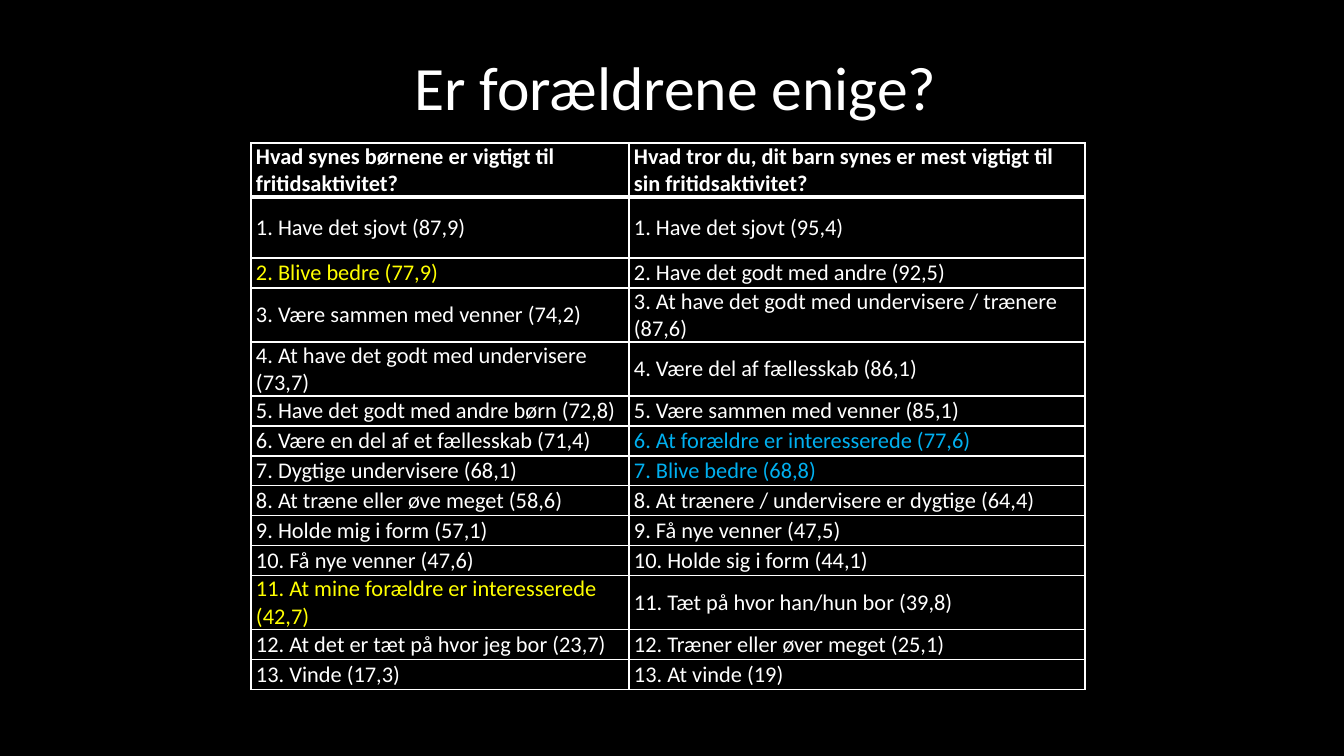
from lxml import etree
from pptx import Presentation
from pptx.dml.color import RGBColor
from pptx.enum.text import MSO_ANCHOR, PP_ALIGN
from pptx.oxml.ns import qn
from pptx.util import Emu, Pt

MIDDLE = MSO_ANCHOR.MIDDLE
CENTER = PP_ALIGN.CENTER

EMU_PER_PX = 914400 / 134.4
FONT = "Calibri"
COLORS = {
    "background": "000000",
    "text": "FFFFFF",
    "children": "FFFF00",
    "parents": "00B0F0",
}

HEADERS = (
    "Hvad synes børnene er vigtigt til fritidsaktivitet?",
    "Hvad tror du, dit barn synes er mest vigtigt til sin fritidsaktivitet?",
)
# Ranked answers: children, parents
ANSWERS = [
    ("Have det sjovt (87,9)", "Have det sjovt (95,4)"),
    ("Blive bedre (77,9)", "Have det godt med andre (92,5)"),
    ("Være sammen med venner (74,2)", "At have det godt med undervisere / trænere (87,6)"),
    ("At have det godt med undervisere (73,7)", "Være del af fællesskab (86,1)"),
    ("Have det godt med andre børn (72,8)", "Være sammen med venner (85,1)"),
    ("Være en del af et fællesskab (71,4)", "At forældre er interesserede (77,6)"),
    ("Dygtige undervisere (68,1)", "Blive bedre (68,8)"),
    ("At træne eller øve meget (58,6)", "At trænere / undervisere er dygtige (64,4)"),
    ("Holde mig i form (57,1)", "Få nye venner (47,5)"),
    ("Få nye venner (47,6)", "Holde sig i form (44,1)"),
    ("At mine forældre er interesserede (42,7)", "Tæt på hvor han/hun bor (39,8)"),
    ("At det er tæt på hvor jeg bor (23,7)", "Træner eller øver meget (25,1)"),
    ("Vinde (17,3)", "At vinde (19)"),
]
# Highlighted answers by (rank, column)
HIGHLIGHTS = {
    (2, 0): "children",
    (11, 0): "children",
    (6, 1): "parents",
    (7, 1): "parents",
}
COLUMN_WIDTHS = (378, 456)
SINGLE_ROW, DOUBLE_ROW, FIRST_ANSWER_ROW = 30, 54, 61
DOUBLE_RANKS = (0, 3, 4, 11)


def px(length):
    return Emu(round(length * EMU_PER_PX))


def rgb(name):
    return RGBColor.from_string(COLORS[name])


def format_text(text_frame, size, color="text", bold=False):
    for paragraph in text_frame.paragraphs:
        for run in paragraph.runs:
            run.font.name = FONT
            run.font.size = Pt(size)
            run.font.bold = bold
            run.font.color.rgb = rgb(color)


def add_title(slide, text):
    title = slide.shapes.add_textbox(px(121), px(38), px(1109), px(105))
    text_frame = title.text_frame
    text_frame.word_wrap = True
    text_frame.vertical_anchor = MIDDLE
    text_frame.text = text
    text_frame.paragraphs[0].alignment = CENTER
    text_frame.paragraphs[0].line_spacing = 0.9
    format_text(text_frame, 33)


def set_border(cell, side, width):
    properties = cell._tc.get_or_add_tcPr()
    line = etree.SubElement(properties, qn(f"a:ln{side}"), w=str(Pt(width)))
    fill = etree.SubElement(line, qn("a:solidFill"))
    etree.SubElement(fill, qn("a:srgbClr"), val=COLORS["text"])


def fill_cell(cell, text, color="text", bold=False, top=1, bottom=1):
    for side, width in (("L", 1), ("R", 1), ("T", top), ("B", bottom)):
        set_border(cell, side, width)
    cell.fill.background()
    cell.margin_left = cell.margin_right = px(5)
    cell.margin_top = cell.margin_bottom = 0
    cell.vertical_anchor = MIDDLE
    cell.text_frame.text = text
    format_text(cell.text_frame, 12, color, bold)


def row_height(rank):
    if rank == 1:
        return FIRST_ANSWER_ROW
    return DOUBLE_ROW if rank in DOUBLE_RANKS else SINGLE_ROW


def add_answer_table(slide):
    heights = [row_height(rank) for rank in range(len(ANSWERS) + 1)]
    table = slide.shapes.add_table(
        len(heights), len(HEADERS), px(251), px(143),
        px(sum(COLUMN_WIDTHS)), px(sum(heights)),
    ).table
    table.first_row = table.horz_banding = False
    for column, width in zip(table.columns, COLUMN_WIDTHS):
        column.width = px(width)
    for row, height in zip(table.rows, heights):
        row.height = px(height)

    # Header row with a thick rule below
    for column, header in enumerate(HEADERS):
        fill_cell(table.cell(0, column), header, bold=True, bottom=3)

    # Numbered answers
    for rank, answers in enumerate(ANSWERS, start=1):
        for column, answer in enumerate(answers):
            fill_cell(
                table.cell(rank, column), f"{rank}. {answer}",
                color=HIGHLIGHTS.get((rank, column), "text"),
                top=3 if rank == 1 else 1,
            )


def main():
    presentation = Presentation()
    presentation.slide_width = px(1344)
    presentation.slide_height = px(756)
    slide = presentation.slides.add_slide(presentation.slide_layouts[6])
    slide.background.fill.solid()
    slide.background.fill.fore_color.rgb = rgb("background")
    add_title(slide, "Er forældrene enige?")
    add_answer_table(slide)
    presentation.save("out.pptx")


if __name__ == "__main__":
    main()
